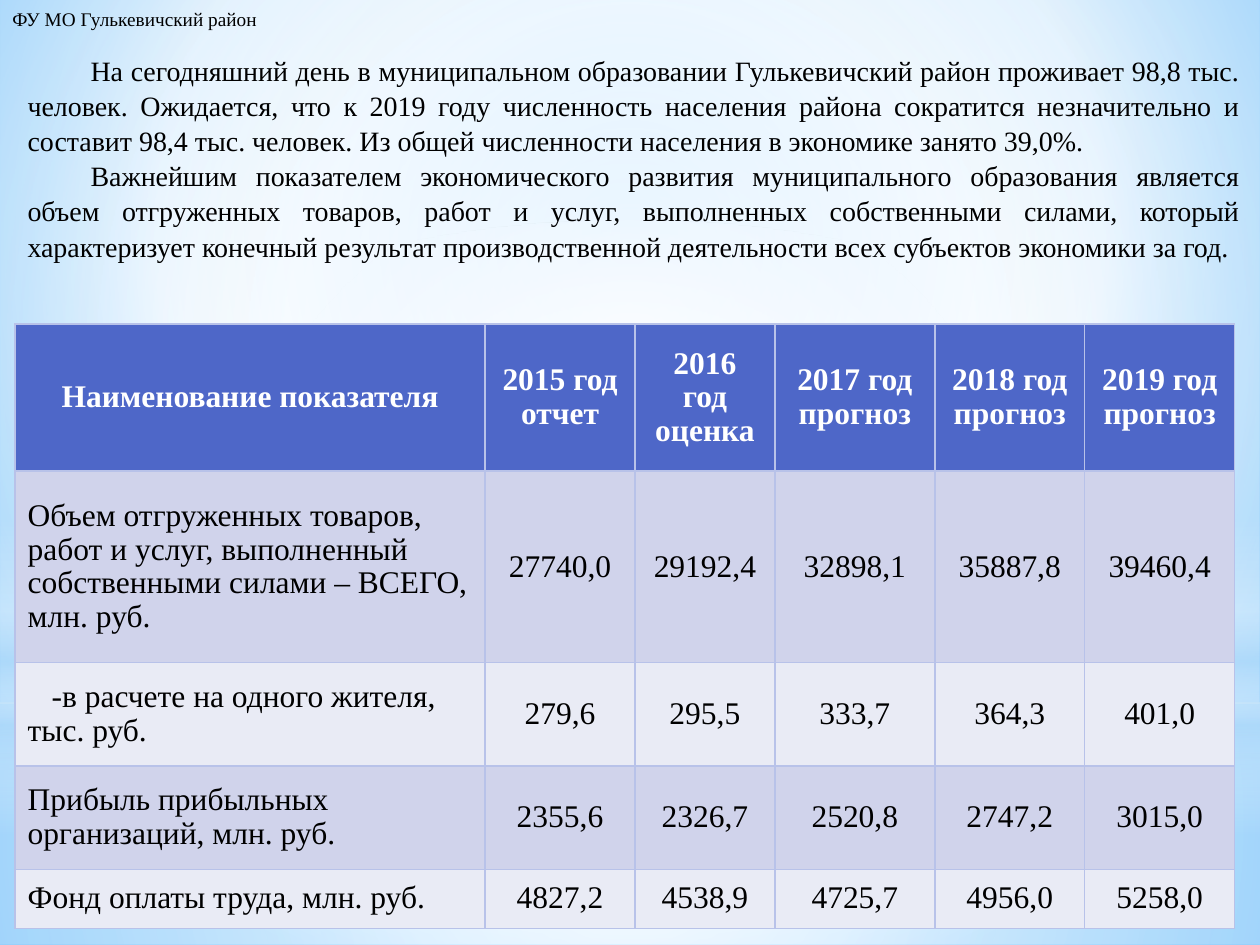
"""Build the slide on the economic indicators of the Gulkevichi district."""

from dataclasses import dataclass
from typing import Optional

from lxml.etree import SubElement
from pptx import Presentation
from pptx.dml.color import RGBColor
from pptx.enum.shapes import MSO_SHAPE as Preset
from pptx.enum.text import MSO_ANCHOR as Anchor, MSO_AUTO_SIZE as AutoSize, PP_ALIGN as Align
from pptx.oxml import parse_xml
from pptx.oxml.ns import nsdecls, qn
from pptx.util import Emu, Inches, Pt

SLIDE_WIDTH, SLIDE_HEIGHT = Inches(10), Inches(7.5)
FONT = "Times New Roman"
BLACK = RGBColor(0x00, 0x00, 0x00)
WHITE = RGBColor(0xFF, 0xFF, 0xFF)
SKY = RGBColor(0x9E, 0xD5, 0xFF)
AZURE = RGBColor(0x5B, 0xB9, 0xFF)
PALE_BLUE = RGBColor(0xB4, 0xDC, 0xFA)
HEADER_BLUE = RGBColor(0x4E, 0x67, 0xC8)
BAND_DARK = RGBColor(0xD0, 0xD3, 0xEB)
BAND_LIGHT = RGBColor(0xE9, 0xEB, 0xF5)
BORDER = RGBColor(0xB8, 0xC2, 0xE9)


@dataclass(frozen=True)
class Stop:
    """A gradient stop; position and opacity are percentages."""
    position: int
    color: RGBColor
    opacity: int = 100


@dataclass(frozen=True)
class Gradient:
    """A circular gradient around a focus, or a linear one at an angle."""
    stops: tuple[Stop, ...]
    focus: tuple[int, int, int, int] = (50, 50, 50, 50)
    angle: Optional[int] = None


@dataclass(frozen=True)
class Box:
    """A rectangle in percentages of the slide's size."""
    left: float
    top: float
    width: float
    height: float

    def lengths(self) -> tuple[Emu, Emu, Emu, Emu]:
        """Return left, top, width and height as lengths."""
        return across(self.left), down(self.top), across(self.width), down(self.height)


@dataclass(frozen=True)
class Layer:
    """A translucent background shape."""
    preset: Preset
    box: Box
    gradient: Gradient


@dataclass(frozen=True)
class TextStyle:
    """The look of a paragraph."""
    size: int
    color: RGBColor = BLACK
    bold: bool = False
    align: Align = Align.LEFT
    spacing: float = 1.0


BACKGROUND = Gradient((Stop(0, SKY), Stop(60, WHITE), Stop(100, AZURE)), (20, 10, 20, 60))
LAYERS = (
    Layer(Preset.RECTANGLE, Box(0, 74.4, 100, 25.6), Gradient(
        (Stop(0, WHITE, 91), Stop(37, WHITE, 76), Stop(100, PALE_BLUE, 79)))),
    Layer(Preset.RECTANGLE, Box(0, 0, 100, 74.4), Gradient(
        (Stop(0, WHITE, 89), Stop(48, WHITE, 62), Stop(100, PALE_BLUE, 79)))),
    Layer(Preset.RECTANGLE, Box(0, 55, 100, 33.33), Gradient(
        (Stop(0, WHITE, 0), Stop(29, WHITE, 30), Stop(45, PALE_BLUE, 40),
         Stop(55, WHITE, 26), Stop(65, PALE_BLUE, 60), Stop(100, WHITE, 0)), angle=90)),
    Layer(Preset.OVAL, Box(0, 23.33, 100, 74.4), Gradient((Stop(0, WHITE), Stop(56, WHITE, 0)))),
)
BODY = (
    "\tНа сегодняшний день в муниципальном образовании Гулькевичский район проживает 98,8 тыс. "
    "человек. Ожидается, что к 2019 году численность населения района сократится незначительно и "
    "составит 98,4 тыс. человек. Из общей численности населения в экономике занято 39,0%.",
    "\tВажнейшим показателем экономического развития муниципального образования является объем "
    "отгруженных товаров, работ и услуг, выполненных собственными силами, который характеризует "
    "конечный результат производственной деятельности всех субъектов экономики за год.",
)
COLUMNS = (37.3, 11.9, 11.1, 12.7, 11.9, 11.9)
ROWS = (15.6, 20.27, 10.93, 10.93, 6.27)
PER_CAPITA_ROW = 2
INDICATORS = (
    ("Наименование показателя", "2015 год отчет", "2016 год оценка",
     "2017 год прогноз", "2018 год прогноз", "2019 год прогноз"),
    ("Объем отгруженных товаров, работ и услуг, выполненный собственными силами – ВСЕГО, млн. руб.",
     "27740,0", "29192,4", "32898,1", "35887,8", "39460,4"),
    ("-в расчете на одного жителя, тыс. руб.", "279,6", "295,5", "333,7", "364,3", "401,0"),
    ("Прибыль прибыльных организаций, млн. руб.",
     "2355,6", "2326,7", "2520,8", "2747,2", "3015,0"),
    ("Фонд оплаты труда, млн. руб.", "4827,2", "4538,9", "4725,7", "4956,0", "5258,0"),
)


def across(percent: float) -> Emu:
    """Return a share of the slide's width."""
    return Emu(round(SLIDE_WIDTH * percent / 100))


def down(percent: float) -> Emu:
    """Return a share of the slide's height."""
    return Emu(round(SLIDE_HEIGHT * percent / 100))


def apply_gradient(properties, gradient: Gradient) -> None:
    """Replace the solid fill of a properties element with a gradient."""
    stops = "".join(
        f'<a:gs pos="{stop.position * 1000}"><a:srgbClr val="{stop.color}">'
        f'<a:alpha val="{stop.opacity * 1000}"/></a:srgbClr></a:gs>' for stop in gradient.stops)
    if gradient.angle is None:
        sides = " ".join(f'{side}="{share * 1000}"' for side, share in zip("ltrb", gradient.focus))
        direction = f'<a:path path="circle"><a:fillToRect {sides}/></a:path>'
    else:
        direction = f'<a:lin ang="{gradient.angle * 60000}" scaled="0"/>'
    fill = parse_xml(f'<a:gradFill {nsdecls("a")} rotWithShape="1">'
                     f'<a:gsLst>{stops}</a:gsLst>{direction}</a:gradFill>')
    properties.replace(properties.find(qn("a:solidFill")), fill)


def paint_background(slide) -> None:
    """Fill the slide's background."""
    slide.background.fill.solid()
    apply_gradient(slide.element.find(".//" + qn("p:bgPr")), BACKGROUND)


def draw_layer(slide, layer: Layer) -> None:
    """Draw one background shape."""
    shape = slide.shapes.add_shape(layer.preset, *layer.box.lengths())
    shape.shadow.inherit = False
    shape.line.fill.background()
    shape.fill.solid()
    apply_gradient(shape.element.spPr, layer.gradient)


def write(paragraph, text: str, style: TextStyle) -> None:
    """Put styled text into a paragraph."""
    paragraph.text = text
    paragraph.alignment = style.align
    paragraph.line_spacing = style.spacing
    for run in paragraph.runs:
        run.font.name = FONT
        run.font.size = Pt(style.size)
        run.font.bold = style.bold
        run.font.color.rgb = style.color


def draw_text(slide, box: Box, texts: tuple[str, ...], style: TextStyle, wrap: bool) -> None:
    """Draw a text box with one paragraph per text."""
    frame = slide.shapes.add_textbox(*box.lengths()).text_frame
    frame.word_wrap = wrap
    frame.auto_size = AutoSize.SHAPE_TO_FIT_TEXT
    frame.text = "\n".join(texts)
    for paragraph, text in zip(frame.paragraphs, texts):
        write(paragraph, text, style)


def outline_cell(cell) -> None:
    """Give a cell thin borders on all sides."""
    properties = cell._tc.get_or_add_tcPr()
    for index, side in enumerate("LRTB"):
        line = SubElement(properties, qn(f"a:ln{side}"), w=str(Pt(1)))
        SubElement(SubElement(line, qn("a:solidFill")), qn("a:srgbClr"), val=str(BORDER))
        properties.insert(index, line)


def draw_table(slide, box: Box) -> None:
    """Draw the table of indicators."""
    table = slide.shapes.add_table(len(ROWS), len(COLUMNS), *box.lengths()).table
    for column, width in zip(table.columns, COLUMNS):
        column.width = across(width)
    for row_index, (row, height, texts) in enumerate(zip(table.rows, ROWS, INDICATORS)):
        row.height = down(height)
        header = row_index == 0
        band = HEADER_BLUE if header else (BAND_LIGHT, BAND_DARK)[row_index % 2]
        for column_index, (cell, text) in enumerate(zip(row.cells, texts)):
            align = Align.CENTER if header or column_index else Align.LEFT
            style = TextStyle(18, WHITE if header else BLACK, header, align, 0.96)
            write(cell.text_frame.paragraphs[0], text, style)
            cell.vertical_anchor = Anchor.MIDDLE
            cell.fill.solid()
            cell.fill.fore_color.rgb = band
            outline_cell(cell)
    label = table.cell(PER_CAPITA_ROW, 0).text_frame.paragraphs[0]
    label._p.get_or_add_pPr().set("indent", str(Inches(0.19)))


def main() -> None:
    """Assemble and save the presentation."""
    presentation = Presentation()
    presentation.slide_width, presentation.slide_height = SLIDE_WIDTH, SLIDE_HEIGHT
    slide = presentation.slides.add_slide(presentation.slide_layouts[6])
    paint_background(slide)
    for layer in LAYERS:
        draw_layer(slide, layer)
    draw_text(slide, Box(1.2, 4.8, 98.2, 26.93), BODY,
              TextStyle(16, align=Align.JUSTIFY, spacing=1.05), True)
    draw_table(slide, Box(1.2, 34.27, sum(COLUMNS), sum(ROWS)))
    draw_text(slide, Box(0, 0.13, 21.8, 3.87), ("ФУ МО Гулькевичский район",), TextStyle(11), False)
    presentation.save("out.pptx")


if __name__ == "__main__":
    main()
